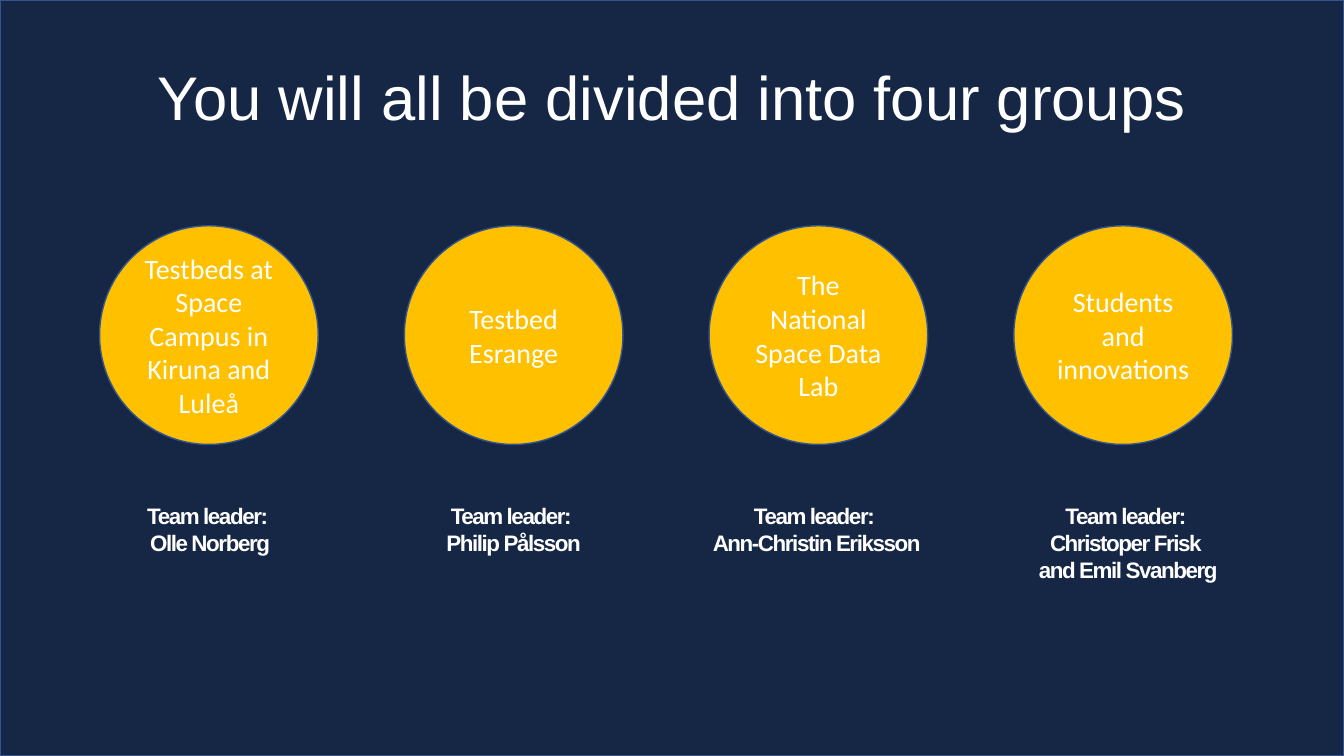
import pptx
import pptx.util
import pptx.dml.color
import pptx.enum.shapes
import pptx.enum.text
from dataclasses import dataclass

Cm = pptx.util.Cm
Pt = pptx.util.Pt
Kind = pptx.enum.shapes.MSO_SHAPE
Anchor = pptx.enum.text.MSO_ANCHOR


@dataclass
class Theme:
    navy: str = "162746"
    gold: str = "FFC000"
    edge: str = "325491"
    white: str = "FFFFFF"
    head: str = "Arial"
    body: str = "Calibri"
    title: int = 44
    group: int = 20
    leader: int = 16


def color(code):
    return pptx.dml.color.RGBColor.from_string(code)


def write(frame, text, *, size, face, ink, bold=False, space=None,
          track=0, anchor=Anchor.MIDDLE):
    frame.word_wrap = True
    frame.vertical_anchor = anchor
    for i, line in enumerate(text.split("\n")):
        para = frame.add_paragraph() if i else frame.paragraphs[0]
        para.text = line
        para.alignment = pptx.enum.text.PP_ALIGN.CENTER
        para.line_spacing = space
        for run in para.runs:
            font = run.font
            font.size = Pt(size)
            font.name = face
            font.bold = bold
            font.color.rgb = color(ink)
            if track:
                run._r.get_or_add_rPr().set("spc", str(track))


class Deck:
    def __init__(self, theme):
        self.theme = theme
        self.show = pptx.Presentation()
        self.show.slide_width = Cm(33.87)
        self.show.slide_height = Cm(19.05)
        self.slide = self.show.slides.add_slide(self.show.slide_layouts[6])

    def shape(self, kind, box, fill):
        item = self.slide.shapes.add_shape(kind, *map(Cm, box))
        item.shadow.inherit = False
        item.fill.solid()
        item.fill.fore_color.rgb = color(fill)
        item.line.color.rgb = color(self.theme.edge)
        item.line.width = Pt(1)
        return item

    def label(self, box, text, **style):
        item = self.slide.shapes.add_textbox(*map(Cm, box))
        write(item.text_frame, text, face=self.theme.head,
              ink=self.theme.white, **style)

    def back(self):
        self.shape(Kind.RECTANGLE, (0, 0, 33.87, 19.05), self.theme.navy)

    def title(self, text):
        self.label((2.34, 0.69, 29.21, 3.68), text,
                   size=self.theme.title, space=0.9)

    def group(self, left, text):
        disc = self.shape(Kind.OVAL, (left, 5.69, 5.51, 5.51), self.theme.gold)
        write(disc.text_frame, text, size=self.theme.group,
              face=self.theme.body, ink=self.theme.white)

    def leader(self, left, names):
        self.label((left, 12.53, 9.73, 3), "Team leader: \n" + names,
                   size=self.theme.leader, bold=True, track=-100,
                   anchor=Anchor.TOP)


def main():
    deck = Deck(Theme())
    deck.back()
    deck.title("You will all be divided into four groups")
    groups = [
        ("Testbeds at Space Campus in Kiruna and Luleå", 0.43, "Olle Norberg"),
        ("Testbed Esrange", 8.08, "Philip Pålsson"),
        ("The National Space Data Lab", 15.72, "Ann-Christin Eriksson"),
        ("Students and innovations", 23.57,
         "Christoper Frisk \vand Emil Svanberg"),
    ]
    for i, (name, left, names) in enumerate(groups):
        deck.group(2.51 + 7.68 * i, name)
        deck.leader(left, names)
    deck.show.save("out.pptx")


if __name__ == "__main__":
    main()
